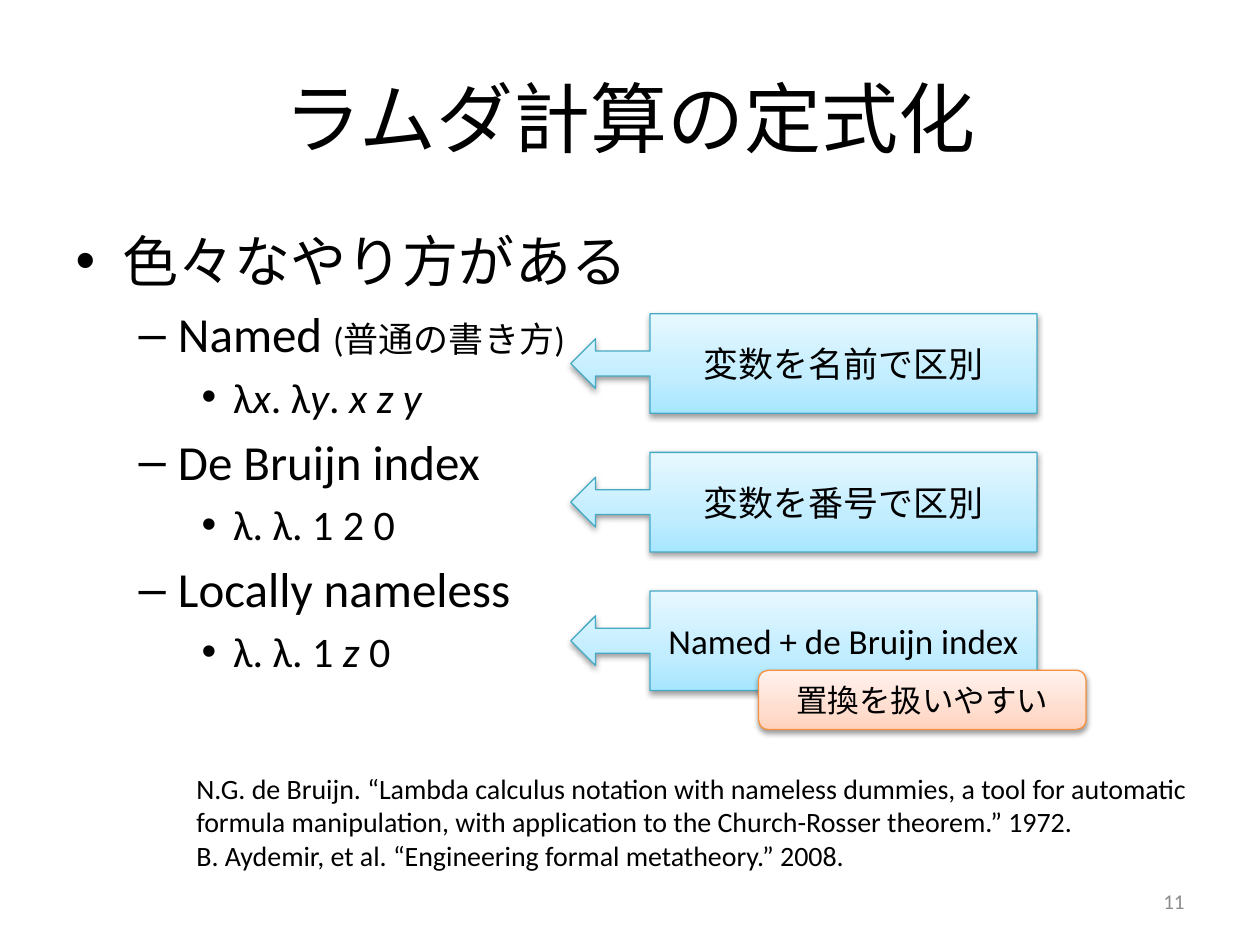
from copy import deepcopy

from lxml import etree
from pptx import Presentation
from pptx.dml.color import RGBColor
from pptx.enum import shapes, text
from pptx.oxml import ns
from pptx.util import Inches, Pt

FONT = "Calibri"
BLACK = RGBColor(0x00, 0x00, 0x00)
GRAY = RGBColor(0x8C, 0x8C, 0x8C)
BLUE_LINE = RGBColor(0x46, 0xAA, 0xC5)
BLUE_STOPS = (RGBColor(0xA7, 0xE6, 0xFF), RGBColor(0xC1, 0xED, 0xFF), RGBColor(0xE7, 0xF8, 0xFF))
ORANGE_LINE = RGBColor(0xF6, 0x92, 0x40)
ORANGE_STOPS = (RGBColor(0xFF, 0xD2, 0xBD), RGBColor(0xFF, 0xDE, 0xD0), RGBColor(0xFF, 0xF2, 0xED))
STOP_POSITIONS = (0, 0.35, 1)

LEVEL_SIZES = (32, 28, 24)
# Each item: level, then runs of (text, italic, size or None for the level's size)
OUTLINE = [
    (0, [("色々なやり方がある", False, None)]),
    (1, [("Named ", False, None), ("(普通の書き方)", False, 20)]),
    (2, [("λ", False, None), ("x", True, None), (". λ", False, None),
         ("y", True, None), (". ", False, None), ("x z y", True, None)]),
    (1, [("De Bruijn index", False, None)]),
    (2, [("λ. λ. 1 2 0", False, None)]),
    (1, [("Locally nameless", False, None)]),
    (2, [("λ. λ. 1 ", False, None), ("z", True, None), (" 0", False, None)]),
]
CALLOUTS = ["変数を名前で区別", "変数を番号で区別", "Named + de Bruijn index"]
REFERENCES = [
    "N.G. de Bruijn. “Lambda calculus notation with nameless dummies, a tool for automatic "
    "formula manipulation, with application to the Church-Rosser theorem.” 1972.",
    "B. Aydemir, et al. “Engineering formal metatheory.” 2008.",
]


def format_run(run, size, color=BLACK, italic=False):
    run.font.name = FONT
    run.font.size = Pt(size)
    run.font.color.rgb = color
    run.font.italic = italic


def place(shape, box):
    shape.left, shape.top, shape.width, shape.height = (Inches(value) for value in box)


def set_text(shape, lines, size, color=BLACK, align=text.PP_ALIGN.LEFT,
             anchor=text.MSO_ANCHOR.MIDDLE):
    text_frame = shape.text_frame
    text_frame.text = "\n".join(lines)
    text_frame.word_wrap = True
    text_frame.vertical_anchor = anchor
    for paragraph in text_frame.paragraphs:
        paragraph.alignment = align
        for run in paragraph.runs:
            format_run(run, size, color)


def add_shadow(shape):
    shape.shadow.inherit = False
    effects = shape._element.spPr.find(ns.qn("a:effectLst"))
    shadow = etree.SubElement(effects, ns.qn("a:outerShdw"), blurRad="40000",
                              dist="20000", dir="5400000", rotWithShape="0")
    color = etree.SubElement(shadow, ns.qn("a:srgbClr"), val="000000")
    etree.SubElement(color, ns.qn("a:alpha"), val="38000")


def add_gradient_shape(slide, kind, box, label, size, colors, line_color):
    shape = slide.shapes.add_shape(kind, *(Inches(value) for value in box))
    shape.fill.gradient()
    shape.fill.gradient_angle = 90
    stop_list = shape._element.spPr.find(".//" + ns.qn("a:gsLst"))
    stop_list.append(deepcopy(stop_list[0]))
    for stop, position, color in zip(shape.fill.gradient_stops, STOP_POSITIONS, colors):
        stop.position = position
        stop.color.rgb = color
    shape.line.color.rgb = line_color
    shape.line.width = Pt(0.75)
    add_shadow(shape)
    set_text(shape, [label], size, align=text.PP_ALIGN.CENTER)
    return shape


def add_title(slide, box):
    title = slide.shapes.title
    place(title, box)
    set_text(title, ["ラムダ計算の定式化"], 44, align=text.PP_ALIGN.CENTER)


def add_outline(slide, box):
    body = slide.placeholders[1]
    place(body, box)
    text_frame = body.text_frame
    for index, (level, runs) in enumerate(OUTLINE):
        paragraph = text_frame.add_paragraph() if index else text_frame.paragraphs[0]
        paragraph.level = level
        for words, italic, size in runs:
            run = paragraph.add_run()
            run.text = words
            format_run(run, size or LEVEL_SIZES[level], italic=italic)


def add_callouts(slide, box, pitch):
    left, top, width, height = box
    for index, label in enumerate(CALLOUTS):
        callout = add_gradient_shape(
            slide, shapes.MSO_SHAPE.LEFT_ARROW_CALLOUT,
            (left, top + index * pitch, width, height), label, 20, BLUE_STOPS, BLUE_LINE)
        for number, value in enumerate((0.25, 0.25, 0.25, 0.83)):
            callout.adjustments[number] = value


def add_text_box(slide, box, lines, size, **style):
    text_box = slide.shapes.add_textbox(*(Inches(value) for value in box))
    set_text(text_box, lines, size, **style)


def main():
    presentation = Presentation()
    presentation.slide_width = Inches(10)
    presentation.slide_height = Inches(7.5)
    slide = presentation.slides.add_slide(presentation.slide_layouts[1])

    # Title and list
    add_title(slide, (0.5, 0.3, 9, 1.25))
    add_outline(slide, (0.5, 1.75, 9, 4.95))

    # Page number and references
    add_text_box(slide, (7.17, 6.95, 2.33, 0.4), ["11"], 12, color=GRAY,
                 align=text.PP_ALIGN.RIGHT)
    add_text_box(slide, (1.46, 6.07, 8.11, 0.91), REFERENCES, 16,
                 anchor=text.MSO_ANCHOR.TOP)

    # Remarks on each notation
    add_callouts(slide, (4.53, 2.49, 3.7, 0.79), pitch=1.1)
    add_gradient_shape(slide, shapes.MSO_SHAPE.ROUNDED_RECTANGLE, (6.02, 5.32, 2.6, 0.47),
                       "置換を扱いやすい", 18, ORANGE_STOPS, ORANGE_LINE)

    presentation.save("out.pptx")


if __name__ == "__main__":
    main()
